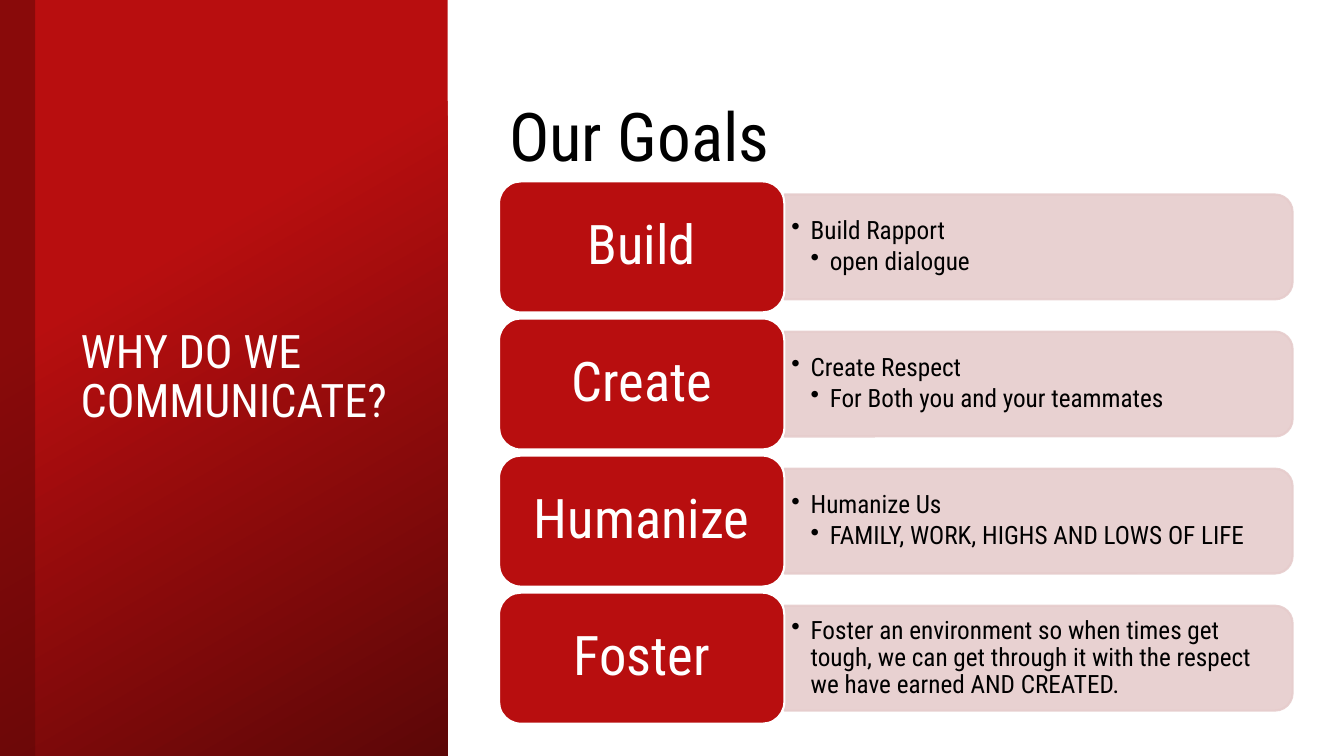
"""Build the "Why do we communicate?" slide with its four goals."""
from dataclasses import dataclass

from lxml.etree import SubElement
from pptx import Presentation
from pptx.dml.color import RGBColor
from pptx.enum.shapes import MSO_SHAPE
from pptx.enum.text import MSO_ANCHOR, PP_ALIGN
from pptx.oxml.ns import qn
from pptx.util import Inches, Pt

TITLE = "WHY DO WE COMMUNICATE?"
HEADING = "Our Goals"
GOALS = [
    ("Build", ["Build Rapport", "open dialogue"]),
    ("Create", ["Create Respect", "For Both you and your teammates"]),
    ("Humanize", ["Humanize Us", "FAMILY, WORK, HIGHS AND LOWS OF LIFE"]),
    ("Foster", ["Foster an environment so when times get tough, we can get "
                "through it with the respect we have earned AND CREATED."]),
]


@dataclass(frozen=True)
class Theme:
    font: str = "Roboto Condensed"
    red: str = "B80E0F"
    dark: str = "5C0707"
    pink: str = "E6CCCC"
    white: str = "FFFFFF"
    black: str = "000000"
    title: int = 33
    heading: int = 48
    card: int = 39
    detail: int = 18


T = Theme()
W, H = 13.33, 7.5
PANEL_W, STRIP_W = 4.44, 0.35
LEFT, TOP, PITCH = 4.95, 1.8, 1.36
CARD_W, CARD_H = 2.83, 1.3
BAR_W, BAR_H = 5.04, 1.04
DETAIL_W, DETAIL_H = 4.99, 0.94
INDENT = 0.19


def rgb(color):
    return RGBColor.from_string(color)


def set_alpha(fill_format, share):
    color = fill_format._xPr.find(qn("a:solidFill"))[0]
    SubElement(color, qn("a:alpha")).set("val", str(share * 1000))


def add_shape(s, kind, box, fill, line=None, alpha=None):
    sp = s.shapes.add_shape(kind, *map(Inches, box))
    sp.shadow.inherit = False
    sp.fill.solid()
    sp.fill.fore_color.rgb = rgb(fill)
    if line:
        sp.line.color.rgb = rgb(line)
        sp.line.width = Pt(1.5)
    else:
        sp.line.fill.background()
    if alpha:
        set_alpha(sp.fill, alpha)
        if line:
            set_alpha(sp.line.fill, alpha)
    return sp


def set_margins(tf, side, end):
    tf.margin_left = tf.margin_right = Inches(side)
    tf.margin_top = tf.margin_bottom = Inches(end)


def write(tf, lines, size, color, align=PP_ALIGN.LEFT, spacing=0.9,
          anchor=MSO_ANCHOR.MIDDLE, bullets=False):
    tf.word_wrap = True
    tf.vertical_anchor = anchor
    tf.text = "\n".join(lines)
    for level, p in enumerate(tf.paragraphs):
        p.alignment = align
        p.line_spacing = spacing
        if bullets:
            p.space_after = Pt(0.15 * size)
            pPr = p._p.get_or_add_pPr()
            pPr.set("marL", str(Inches(INDENT * (level + 1))))
            pPr.set("indent", str(-Inches(INDENT)))
            SubElement(pPr, qn("a:buChar")).set("char", "•")
        for r in p.runs:
            r.font.name = T.font
            r.font.size = Pt(size)
            r.font.color.rgb = rgb(color)


def add_panel(s):
    panel = add_shape(s, MSO_SHAPE.RECTANGLE, (0, 0, PANEL_W, H), T.red)
    panel.fill.gradient()
    panel.fill.gradient_angle = 300
    stops = zip(panel.fill.gradient_stops, (0.34, 1), (T.red, T.dark))
    for stop, position, color in stops:
        stop.position = position
        stop.color.rgb = rgb(color)
    strip = add_shape(s, MSO_SHAPE.RECTANGLE, (0, 0, STRIP_W, H), T.dark,
                      alpha=50)
    title = s.shapes.title
    for sp in (panel, strip):
        title._element.addprevious(sp._element)
    title.left, title.top, title.width, title.height = map(
        Inches, (0.7, 1.34, 3.34, 4.82))
    write(title.text_frame, [TITLE], T.title, T.white)


def add_goal(s, top, name, details):
    right = LEFT + CARD_W
    middle = top + CARD_H / 2
    bar_box = (right + (BAR_W - BAR_H) / 2, middle - BAR_W / 2, BAR_H, BAR_W)
    bar = add_shape(s, MSO_SHAPE.ROUND_2_SAME_RECTANGLE, bar_box, T.pink,
                    line=T.pink, alpha=90)
    bar.rotation = 90
    detail_box = (right, middle - DETAIL_H / 2, DETAIL_W, DETAIL_H)
    tf = s.shapes.add_textbox(*map(Inches, detail_box)).text_frame
    set_margins(tf, 0.07, 0.04)
    write(tf, details, T.detail, T.black, bullets=True)
    card = add_shape(s, MSO_SHAPE.ROUNDED_RECTANGLE,
                     (LEFT, top, CARD_W, CARD_H), T.red, line=T.white)
    set_margins(card.text_frame, 0.16, 0.08)
    write(card.text_frame, [name], T.card, T.white, align=PP_ALIGN.CENTER)


def main():
    prs = Presentation()
    prs.slide_width, prs.slide_height = Inches(W), Inches(H)
    s = prs.slides.add_slide(prs.slide_layouts[5])
    add_panel(s)
    for row, (name, details) in enumerate(GOALS):
        add_goal(s, TOP + row * PITCH, name, details)
    heading = s.shapes.add_textbox(*map(Inches, (LEFT, 0.89, 4.69, 0.91)))
    write(heading.text_frame, [HEADING], T.heading, T.black, spacing=1.0,
          anchor=MSO_ANCHOR.TOP)
    prs.save("out.pptx")


if __name__ == "__main__":
    main()
